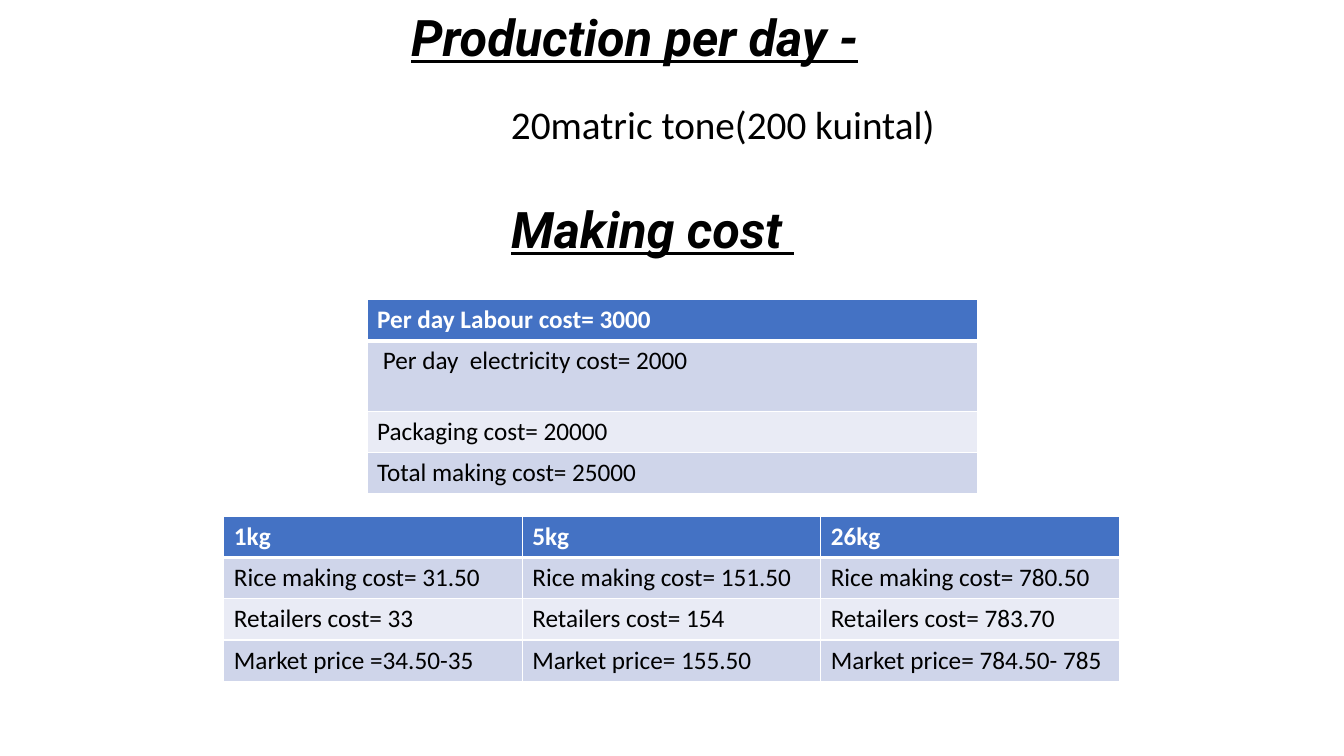
from pptx import Presentation
from pptx.dml.color import RGBColor
from pptx.enum.text import MSO_ANCHOR, MSO_AUTO_SIZE, PP_ALIGN
from pptx.oxml import parse_xml
from pptx.oxml.ns import nsdecls
from pptx.util import Inches, Pt

LEFT = PP_ALIGN.LEFT
TOP, MIDDLE = MSO_ANCHOR.TOP, MSO_ANCHOR.MIDDLE
NO_AUTOFIT = MSO_AUTO_SIZE.NONE

COLORS = {
    "text": "000000",
    "header_text": "FFFFFF",
    "header": "4472C4",
    "odd_row": "CFD5EA",
    "even_row": "E9EBF5",
    "border": "FFFFFF",
}
HEADING = {"name": "Roboto", "size": Pt(36), "bold": True, "italic": True, "underline": True}
STATEMENT = {"name": "Calibri", "size": Pt(28)}
HEADER_CELL = {"name": "Calibri", "size": Pt(18), "bold": True}
BODY_CELL = {"name": "Calibri", "size": Pt(18), "bold": False}

MAKING_COST = ("Making cost ", (4.97, 2.02, 4.73, 0.57))
PRODUCTION = [
    ("Production per day -", (3.98, 0.01, 5.71, 0.71), HEADING),
    ("20matric tone(200 kuintal)", (4.97, 0.95, 4.73, 0.57), STATEMENT),
]
COST_TABLES = [
    {
        "at": (3.64, 2.97),
        "column_width": 6.06,
        "row_heights": [0.41, 0.7, 0.41, 0.41],
        "rows": [
            ["Per day Labour cost= 3000"],
            [" Per day  electricity cost= 2000"],
            ["Packaging cost= 20000"],
            ["Total making cost= 25000"],
        ],
    },
    {
        "at": (2.22, 5.12),
        "column_width": 2.96,
        "row_heights": [0.41] * 4,
        "rows": [
            ["1kg", "5kg", "26kg"],
            ["Rice making cost= 31.50", "Rice making cost= 151.50", "Rice making cost= 780.50"],
            ["Retailers cost= 33", "Retailers cost= 154", "Retailers cost= 783.70"],
            ["Market price =34.50-35", "Market price= 155.50", "Market price= 784.50- 785"],
        ],
    },
]


def write(frame, text, font_format, color, anchor):
    frame.word_wrap = True
    frame.vertical_anchor = anchor
    paragraph = frame.paragraphs[0]
    paragraph.alignment = LEFT
    run = paragraph.add_run()
    run.text = text
    for attribute, value in font_format.items():
        setattr(run.font, attribute, value)
    run.font.color.rgb = RGBColor.from_string(COLORS[color])
    return paragraph


def set_borders(cell, row_index):
    widths = {
        "lnL": 1,
        "lnR": 1,
        "lnT": 3 if row_index == 1 else 1,
        "lnB": 3 if row_index == 0 else 1,
    }
    properties = cell._tc.get_or_add_tcPr()
    for position, (side, width) in enumerate(widths.items()):
        properties.insert(position, parse_xml(
            f'<a:{side} {nsdecls("a")} w="{Pt(width)}"><a:solidFill>'
            f'<a:srgbClr val="{COLORS["border"]}"/></a:solidFill></a:{side}>'
        ))


def add_cost_table(slide, content):
    rows, heights = content["rows"], content["row_heights"]
    column_count = len(rows[0])
    left, top = content["at"]
    table = slide.shapes.add_table(
        len(rows), column_count, Inches(left), Inches(top),
        Inches(content["column_width"] * column_count), Inches(sum(heights)),
    ).table
    for column in table.columns:
        column.width = Inches(content["column_width"])
    for row_index, (texts, height) in enumerate(zip(rows, heights)):
        table.rows[row_index].height = Inches(height)
        is_header = row_index == 0
        band = "header" if is_header else "odd_row" if row_index % 2 else "even_row"
        for column_index, text in enumerate(texts):
            cell = table.cell(row_index, column_index)
            cell.fill.solid()
            cell.fill.fore_color.rgb = RGBColor.from_string(COLORS[band])
            set_borders(cell, row_index)
            write(
                cell.text_frame, text,
                HEADER_CELL if is_header else BODY_CELL,
                "header_text" if is_header else "text", TOP,
            )


def main():
    presentation = Presentation()
    presentation.slide_width = Inches(13.33)
    presentation.slide_height = Inches(7.5)
    slide = presentation.slides.add_slide(presentation.slide_layouts[5])

    title = slide.shapes.title
    text, place = MAKING_COST
    title.left, title.top, title.width, title.height = map(Inches, place)
    title.text_frame.auto_size = NO_AUTOFIT
    write(title.text_frame, text, HEADING, "text", MIDDLE).line_spacing = 0.9

    for cost_table in COST_TABLES:
        add_cost_table(slide, cost_table)
    for text, place, font_format in PRODUCTION:
        production = slide.shapes.add_textbox(*map(Inches, place))
        write(production.text_frame, text, font_format, "text", TOP)

    presentation.save("out.pptx")


if __name__ == "__main__":
    main()
